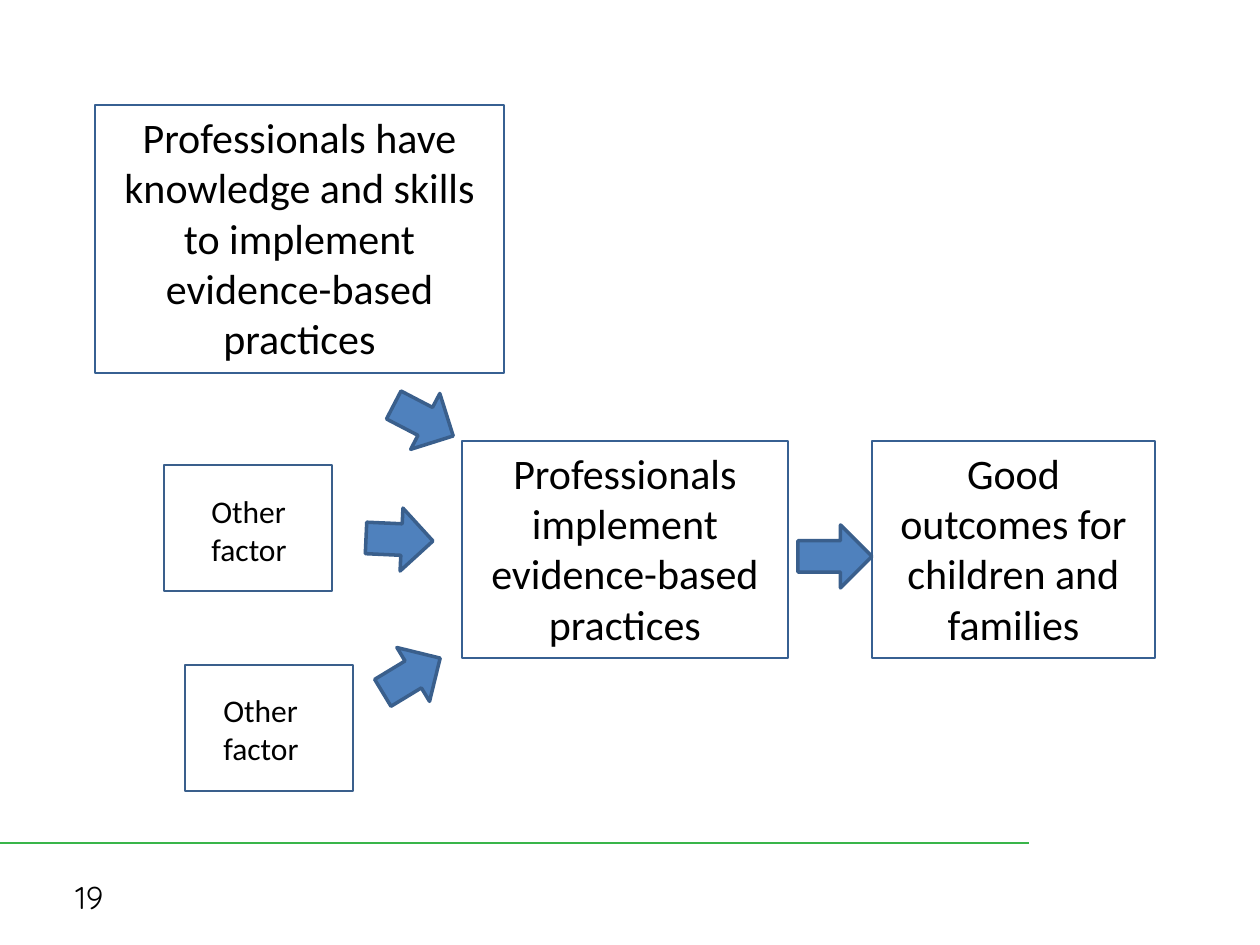
from dataclasses import dataclass

from lxml.etree import SubElement
from pptx import Presentation
from pptx.dml.color import RGBColor
from pptx.enum.shapes import MSO_CONNECTOR, MSO_SHAPE
from pptx.enum.text import MSO_ANCHOR, PP_ALIGN
from pptx.oxml.ns import qn
from pptx.util import Inches, Pt


@dataclass(frozen=True)
class Theme:
    text: RGBColor = RGBColor.from_string("000000")
    main_border: RGBColor = RGBColor.from_string("376092")
    factor_border: RGBColor = RGBColor.from_string("3A5F8C")
    arrow: RGBColor = RGBColor.from_string("4F81BD")
    rule: RGBColor = RGBColor.from_string("39B54A")
    body_font: str = "Calibri"
    number_font: str = "Quicksand"
    main_size: int = 24
    small_size: int = 18
    border_width: float = 0.75
    rule_width: float = 1.5
    arrow_width: float = 2


THEME = Theme()

# left, top, width, height
MAIN_BOXES = [
    ("Good outcomes for children and families", (872, 441, 283, 217)),
    ("Professionals implement evidence-based practices", (462, 441, 326, 217)),
    ("Professionals have knowledge and skills to implement evidence-based practices",
     (95, 105, 409, 268)),
]

# left, top, width, height, rotation
ARROWS = [
    (798, 525, 74, 63, 0),
    (390, 389, 67, 63, 27.5),
    (366, 508, 67, 63, 2.6),
    (378, 644, 67, 63, 328.8),
]

# frame left and top, label left and top
OTHER_FACTORS = [
    (164, 465, 199, 486),
    (185, 665, 211, 685),
]


def px(length):
    return Inches(length / 126)


def add_text(frame, words, size, font, align):
    frame.word_wrap = True
    para = frame.paragraphs[0]
    para.alignment = align
    span = para.add_run()
    span.text = words
    span.font.size = Pt(size)
    span.font.name = font
    span.font.color.rgb = THEME.text


def add_outlined(page, kind, place, color, width):
    shape = page.shapes.add_shape(kind, *map(px, place))
    shape.shadow.inherit = False
    shape.fill.background()
    shape.line.color.rgb = color
    shape.line.width = Pt(width)
    return shape


def add_main_box(page, words, place):
    box = add_outlined(page, MSO_SHAPE.RECTANGLE, place,
                       THEME.main_border, THEME.border_width)
    box.text_frame.vertical_anchor = MSO_ANCHOR.TOP
    add_text(box.text_frame, words, THEME.main_size, THEME.body_font, PP_ALIGN.CENTER)


def add_arrow(page, place, rotation):
    arrow = add_outlined(page, MSO_SHAPE.RIGHT_ARROW, place,
                         THEME.factor_border, THEME.arrow_width)
    arrow.fill.solid()
    arrow.fill.fore_color.rgb = THEME.arrow
    arrow.rotation = rotation


def add_label(page, words, place, font, anchor):
    label = page.shapes.add_textbox(*map(px, place))
    label.text_frame.vertical_anchor = anchor
    add_text(label.text_frame, words, THEME.small_size, font, PP_ALIGN.LEFT)


def add_other_factor(page, left, top, label_left, label_top):
    add_outlined(page, MSO_SHAPE.RECTANGLE, (left, top, 168, 126),
                 THEME.factor_border, THEME.border_width)
    add_label(page, "Other factor", (label_left, label_top, 116, 89),
              THEME.body_font, MSO_ANCHOR.TOP)


def add_footer_rule(page):
    rule = page.shapes.add_connector(MSO_CONNECTOR.STRAIGHT,
                                     px(0), px(843), px(1029), px(843))
    rule.line.color.rgb = THEME.rule
    rule.line.width = Pt(THEME.rule_width)
    SubElement(rule.element.spPr, qn("a:effectLst"))


def main():
    deck = Presentation()
    deck.slide_width, deck.slide_height = px(1260), px(945)
    page = deck.slides.add_slide(deck.slide_layouts[6])

    add_footer_rule(page)
    for words, place in MAIN_BOXES:
        add_main_box(page, words, place)
    for *place, rotation in ARROWS:
        add_arrow(page, place, rotation)
    for factor in OTHER_FACTORS:
        add_other_factor(page, *factor)
    add_label(page, "19", (63, 872, 294, 50), THEME.number_font, MSO_ANCHOR.MIDDLE)

    deck.save("out.pptx")


if __name__ == "__main__":
    main()
